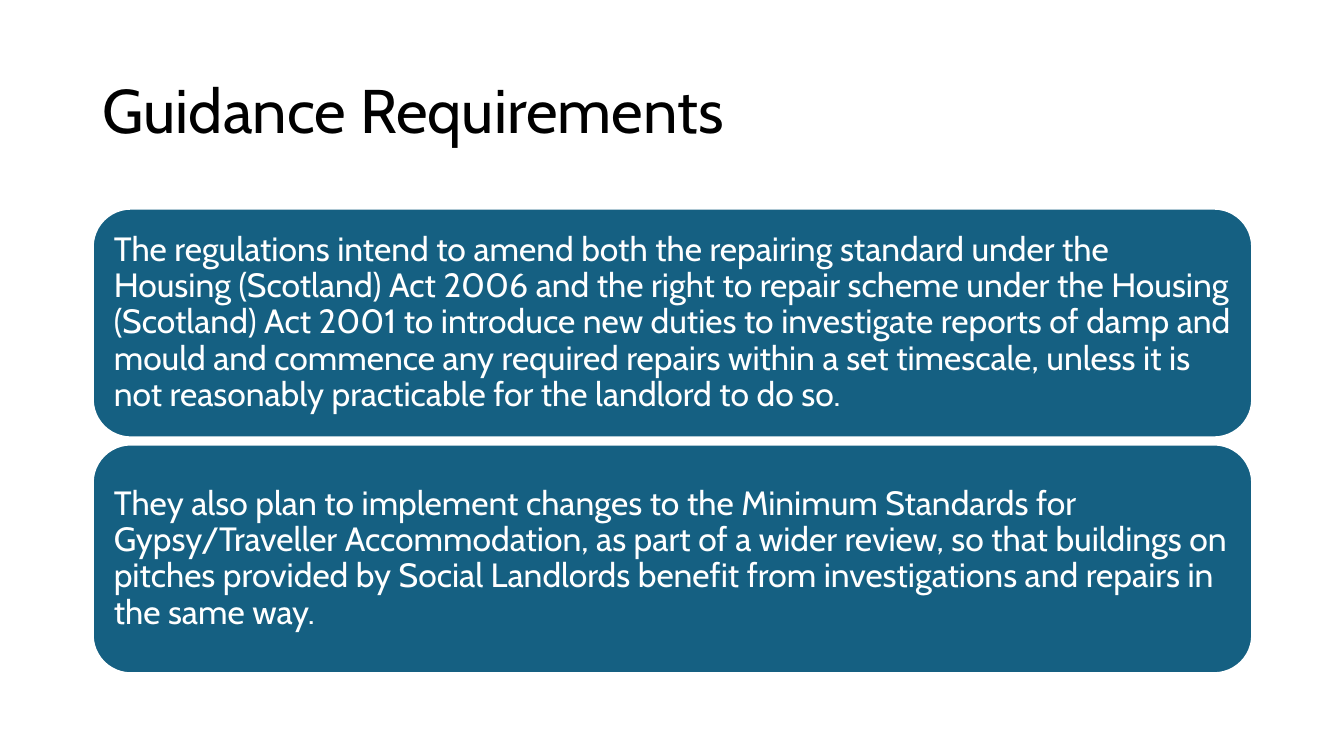
"""Builds the Guidance Requirements slide with two stacked text panels."""
from pptx import Presentation
from pptx.dml.color import RGBColor
from pptx.enum.shapes import MSO_SHAPE
from pptx.enum.text import MSO_ANCHOR, PP_ALIGN
from pptx.util import Inches, Pt

ROUNDED = MSO_SHAPE.ROUNDED_RECTANGLE
MIDDLE = MSO_ANCHOR.MIDDLE
LEFT = PP_ALIGN.LEFT

MARGIN, CONTENT_WIDTH = 0.92, 11.5
PANEL_TOP, PANEL_HEIGHT, PANEL_GAP = 2.07, 2.27, 0.07

REQUIREMENTS = [
    "The regulations intend to amend both the repairing standard under the "
    "Housing (Scotland) Act 2006 and the right to repair scheme under the "
    "Housing (Scotland) Act 2001 to introduce new duties to investigate "
    "reports of damp and mould and commence any required repairs within a set "
    "timescale, unless it is not reasonably practicable for the landlord to do so.",
    "They also plan to implement changes to the Minimum Standards for "
    "Gypsy/Traveller Accommodation, as part of a wider review, so that "
    "buildings on pitches provided by Social Landlords benefit from "
    "investigations and repairs in the same way.",
]


def rgb(value):
    return RGBColor.from_string(value)


def write(frame, text, *, size, color, font, inset_x=0.1, inset_y=0.1):
    frame.word_wrap = True
    frame.vertical_anchor = MIDDLE
    frame.margin_left = frame.margin_right = Inches(inset_x)
    frame.margin_top = frame.margin_bottom = Inches(inset_y)
    paragraph = frame.paragraphs[0]
    paragraph.alignment = LEFT
    paragraph.line_spacing = 0.9
    run = paragraph.add_run()
    run.text = text
    run.font.name = font
    run.font.size = Pt(size)
    run.font.color.rgb = rgb(color)


class GuidanceSlide:
    font = "Cabin"
    ink = "000000"
    paper = "FFFFFF"
    panel_fill = "156082"

    def __init__(self, slide):
        self.slide = slide

    def title(self, text, left, top, width, height):
        heading = self.slide.shapes.add_textbox(
            Inches(left), Inches(top), Inches(width), Inches(height))
        write(heading.text_frame, text, size=44, color=self.ink,
              font=self.font, inset_y=0.05)

    def panel(self, text, left, top, width, height):
        requirement = self.slide.shapes.add_shape(
            ROUNDED, Inches(left), Inches(top), Inches(width), Inches(height))
        requirement.shadow.inherit = False
        requirement.fill.solid()
        requirement.fill.fore_color.rgb = rgb(self.panel_fill)
        requirement.line.color.rgb = rgb(self.paper)
        requirement.line.width = Pt(1.5)
        write(requirement.text_frame, text, size=24, color=self.paper,
              font=self.font)


def main():
    deck = Presentation()
    deck.slide_width, deck.slide_height = Inches(13.33), Inches(7.5)
    guidance = GuidanceSlide(deck.slides.add_slide(deck.slide_layouts[6]))
    guidance.title("Guidance Requirements", MARGIN, 0.4, CONTENT_WIDTH, 1.45)
    for row, requirement in enumerate(REQUIREMENTS):
        top = PANEL_TOP + row * (PANEL_HEIGHT + PANEL_GAP)
        guidance.panel(requirement, MARGIN, top, CONTENT_WIDTH, PANEL_HEIGHT)
    deck.save("out.pptx")


if __name__ == "__main__":
    main()
